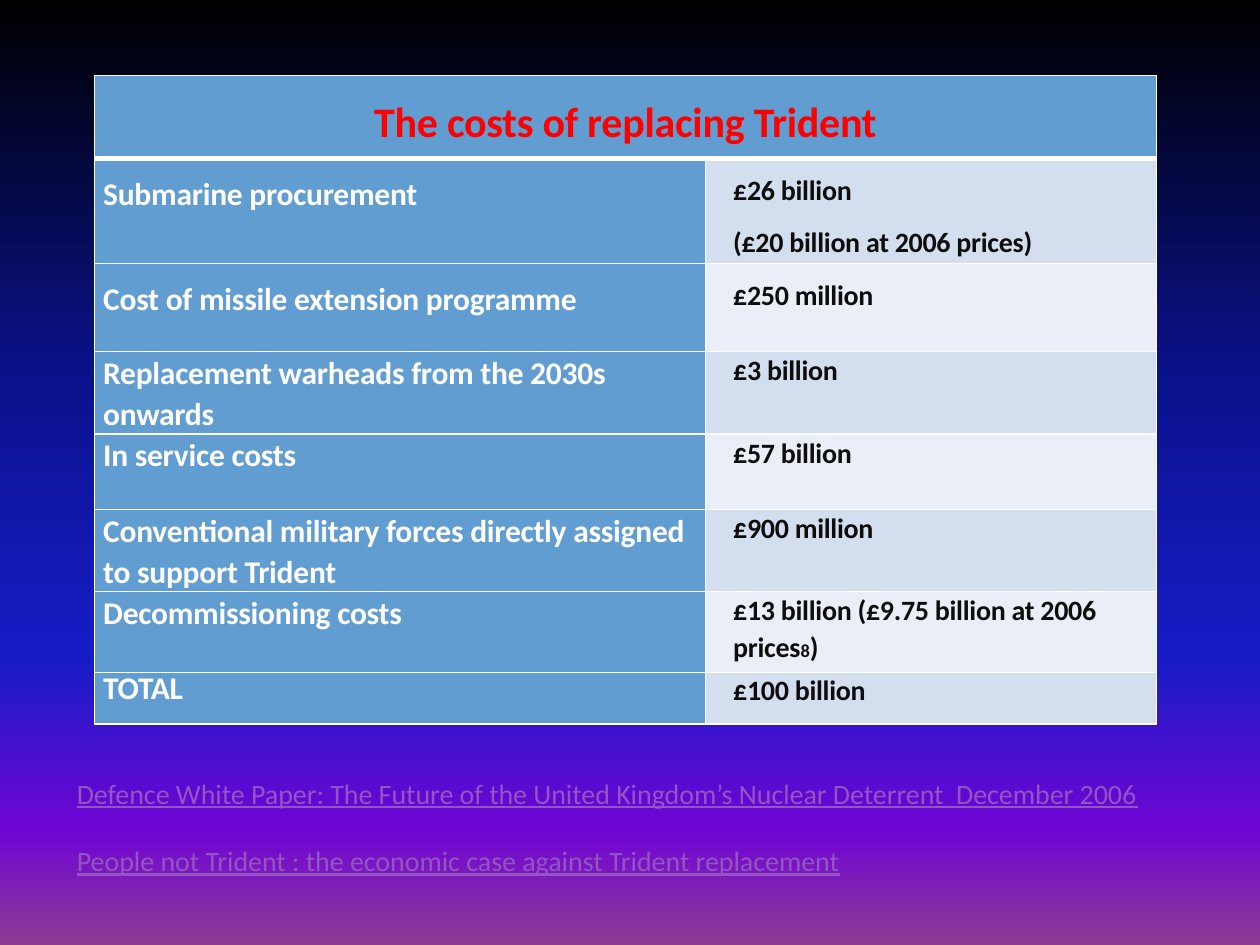
from lxml.etree import SubElement
from pptx import Presentation
from pptx.dml.color import RGBColor
from pptx.enum.text import MSO_ANCHOR, PP_ALIGN
from pptx.oxml.ns import qn
from pptx.util import Cm, Pt

WHITE = RGBColor(0xFF, 0xFF, 0xFF)
RED = RGBColor(0xFF, 0x00, 0x00)
INK = RGBColor(0x0D, 0x0D, 0x0D)
BLUE = RGBColor(0x62, 0x9D, 0xD1)
PALE = RGBColor(0xD3, 0xDF, 0xEE)
LIGHT = RGBColor(0xEA, 0xEF, 0xF7)
LINK = RGBColor(0x94, 0x54, 0xC3)
SKY = [
    (0, RGBColor(0x00, 0x00, 0x00)),
    (40, RGBColor(0x0A, 0x12, 0x8C)),
    (70, RGBColor(0x18, 0x1C, 0xC7)),
    (88, RGBColor(0x70, 0x05, 0xD4)),
    (100, RGBColor(0x8C, 0x3D, 0x91)),
]

FONT = "Calibri"
HEAD = {"name": FONT, "bold": True, "size": Pt(24)}
ITEM = {"name": FONT, "bold": True, "size": Pt(18)}
COST = {"name": FONT, "bold": True, "size": Pt(16)}
NOTE = {"name": FONT, "underline": True, "size": Pt(16)}

LOOSE = {"line_spacing": 1.44, "space_before": Pt(1.8)}
CLOSE = {"line_spacing": 1.07}
TIGHT = {"line_spacing": Pt(10.2)}

# Item, cost paragraphs, row height in cm, paragraph format
ROWS = [
    ("Submarine procurement",
     ["£26 billion", "(£20 billion at 2006 prices)"], 2.11, LOOSE),
    ("Cost of missile extension programme", ["£250 million"], 1.78, LOOSE),
    ("Replacement warheads from the 2030s onwards",
     ["£3 billion"], 1.63, CLOSE),
    ("In service costs", ["£57 billion"], 1.52, CLOSE),
    ("Conventional military forces directly assigned to support Trident",
     ["£900 million"], 1.63, CLOSE),
    ("Decommissioning costs",
     ["£13 billion (£9.75 billion at 2006 prices8)"], 1.63, CLOSE),
    ("TOTAL", ["£100 billion"], 1.04, TIGHT),
]
LINKS = [
    "Defence White Paper: The Future of the United Kingdom’s Nuclear "
    "Deterrent  December 2006",
    "People not Trident : the economic case against Trident replacement",
]


def apply(obj, form):
    for key, value in form.items():
        setattr(obj, key, value)


def add_run(para, text, form, color, track=0):
    """Add a run; track is the letter spacing in hundredths of a point."""
    run = para.add_run()
    run.text = text
    apply(run.font, form)
    run.font.color.rgb = color
    if track:
        run.font._element.set("spc", str(track))
    return run


def get_para(frame, index):
    return frame.paragraphs[0] if index == 0 else frame.add_paragraph()


def paint_sky(slide):
    fill = slide.background.fill
    fill.gradient()
    fill.gradient_angle = 270
    stops = slide._element.find(".//" + qn("a:gsLst"))
    for stop in list(stops):
        stops.remove(stop)
    for place, color in SKY:
        stop = SubElement(stops, qn("a:gs"), pos=str(place * 1000))
        SubElement(stop, qn("a:srgbClr"), val=str(color))


def add_edges(cell, base=1):
    """Draw white cell borders; base is the bottom width in points."""
    props = cell._tc.get_or_add_tcPr()
    for side, width in (("L", 1), ("R", 1), ("T", 1), ("B", base)):
        line = SubElement(props, qn("a:ln" + side), w=str(Pt(width)))
        fill = SubElement(line, qn("a:solidFill"))
        SubElement(fill, qn("a:srgbClr"), val=str(WHITE))


def fill_cell(cell, texts, form, color, back, layout, indent=0, base=1):
    add_edges(cell, base)
    cell.fill.solid()
    cell.fill.fore_color.rgb = back
    apply(cell, {
        "margin_left": Cm(0.18), "margin_right": Cm(0.18),
        "margin_top": Pt(10.2) if layout is TIGHT else 0,
        "margin_bottom": 0, "vertical_anchor": MSO_ANCHOR.TOP,
    })
    for index, text in enumerate(texts):
        para = get_para(cell.text_frame, index)
        apply(para, layout)
        if indent:
            para._p.get_or_add_pPr().set("marL", str(indent))
        body, mark, tail = text.partition("8)")
        add_run(para, body, form, color, -15)
        if mark:
            add_run(para, "8", {**form, "size": Pt(10.5)}, color, -15)
            add_run(para, ")" + tail, form, color)


def add_costs(slide):
    heights = [1.68] + [row[2] for row in ROWS]
    table = slide.shapes.add_table(
        len(heights), 2, Cm(1.9), Cm(1.52), Cm(21.41), Cm(sum(heights))).table
    for column, width in zip(table.columns, (12.32, 9.09)):
        column.width = Cm(width)
    for row, height in zip(table.rows, heights):
        row.height = Cm(height)

    head = table.cell(0, 0)
    head.merge(table.cell(0, 1))
    fill_cell(head, ["The costs of replacing Trident"], HEAD, RED, BLUE,
              {**LOOSE, "alignment": PP_ALIGN.CENTER}, base=3)
    add_edges(table.cell(0, 1), 3)
    for index, (item, costs, _, layout) in enumerate(ROWS, 1):
        fill_cell(table.cell(index, 0), [item], ITEM, WHITE, BLUE, layout)
        fill_cell(table.cell(index, 1), costs, COST, INK,
                  PALE if index % 2 else LIGHT, layout, indent=Cm(0.38))


def add_links(slide):
    box = slide.shapes.add_textbox(Cm(1.3), Cm(15.52), Cm(22.81), Cm(2.31))
    frame = box.text_frame
    frame.word_wrap = True
    for index, text in enumerate(LINKS):
        para = get_para(frame, index)
        if index:
            para.space_before = Pt(19.5)
        add_run(para, text, NOTE, LINK)


def main():
    deck = Presentation()
    deck.slide_width, deck.slide_height = Cm(25.4), Cm(19.05)
    slide = deck.slides.add_slide(deck.slide_layouts[6])
    paint_sky(slide)
    add_costs(slide)
    add_links(slide)
    deck.save("out.pptx")


if __name__ == "__main__":
    main()
